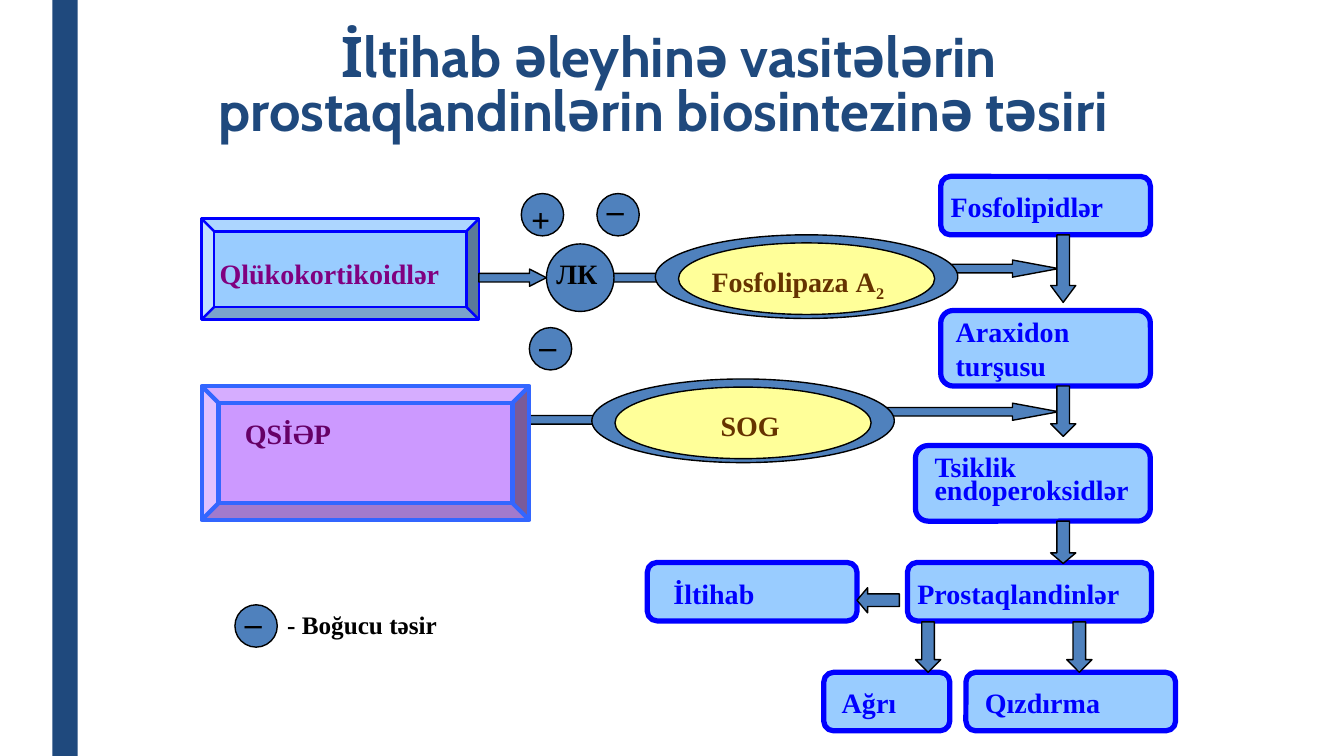
from typing import NamedTuple

from pptx import Presentation
from pptx.dml.color import RGBColor
from pptx.enum.shapes import MSO_SHAPE as Preset
from pptx.enum.text import MSO_ANCHOR as Anchor, MSO_AUTO_SIZE as AutoSize, PP_ALIGN as Align
from pptx.util import Inches, Pt

SERIF = "Times New Roman"
NAVY, STEEL, SKY, YELLOW = "1F497D", "4F81BD", "99CCFF", "FFFF99"
BLUE, BROWN, BLACK = "0000FF", "663300", "000000"
SIGN_SIZE = 0.42


class Figure(NamedTuple):
    preset: Preset
    left: float
    top: float
    width: float
    height: float
    fill: str = STEEL
    line: str | None = BLACK
    weight: float = 1
    adjust: tuple[float, ...] = ()


class Label(NamedTuple):
    text: str
    left: float
    top: float
    width: float
    height: float = 0.44
    color: str = BLUE
    size: float = 20
    spacing: float = 1
    align: Align = Align.LEFT
    subscript: str = ""


class Sign(NamedTuple):
    text: str
    left: float
    top: float
    rise: float


def rgb(value: str) -> RGBColor:
    return RGBColor.from_string(value)


def arrow(preset: Preset, left: float, top: float, width: float, height: float) -> Figure:
    head = max(width, height) / 4 / min(width, height)
    return Figure(preset, left, top, width, height, adjust=(0.5, head))


def stage(left: float, top: float, width: float, height: float = 0.58) -> Figure:
    return Figure(Preset.ROUNDED_RECTANGLE, left, top, width, height, SKY, BLUE, 3.75, (0.167,))


def enzyme(left: float, top: float) -> list[Figure]:
    return [
        Figure(Preset.OVAL, left, top, 3, 0.83),
        Figure(Preset.OVAL, left + 0.23, top + 0.08, 2.54, 0.71, YELLOW),
    ]


def draw_figure(slide, figure: Figure) -> None:
    box = map(Inches, (figure.left, figure.top, figure.width, figure.height))
    shape = slide.shapes.add_shape(figure.preset, *box)
    shape.shadow.inherit = False
    shape.fill.solid()
    shape.fill.fore_color.rgb = rgb(figure.fill)
    if figure.line:
        shape.line.color.rgb = rgb(figure.line)
        shape.line.width = Pt(figure.weight)
    else:
        shape.line.fill.background()
    for index, value in enumerate(figure.adjust):
        shape.adjustments[index] = value


def add_run(paragraph, text: str, font: str, size: float, color: str):
    run = paragraph.add_run()
    run.text = text
    run.font.name = font
    run.font.size = Pt(size)
    run.font.bold = True
    run.font.color.rgb = rgb(color)
    return run


def draw_label(slide, label: Label) -> None:
    box = map(Inches, (label.left, label.top, label.width, label.height))
    frame = slide.shapes.add_textbox(*box).text_frame
    frame.word_wrap = True
    frame.auto_size = AutoSize.SHAPE_TO_FIT_TEXT
    paragraph = frame.paragraphs[0]
    paragraph.alignment = label.align
    paragraph.line_spacing = label.spacing
    add_run(paragraph, label.text, SERIF, label.size, label.color)
    if label.subscript:
        run = add_run(paragraph, label.subscript, SERIF, label.size, label.color)
        run.font._element.set("baseline", "-25000")


def draw_title(slide, text: str) -> None:
    title = slide.shapes.title
    title.left, title.top = Inches(1.62), Inches(0.25)
    title.width, title.height = Inches(10.04), Inches(1.25)
    frame = title.text_frame
    frame.word_wrap = True
    frame.auto_size = AutoSize.NONE
    frame.vertical_anchor = Anchor.MIDDLE
    paragraph = frame.paragraphs[0]
    paragraph.alignment = Align.CENTER
    paragraph.line_spacing = 0.8
    add_run(paragraph, text, "Cabin", 40, NAVY)


SIGNS = [
    Sign("+", 5.17, 1.92, 0),
    Sign("–", 5.92, 1.92, 0.09),
    Sign("–", 5.25, 3.25, 0.08),
    Sign("–", 2.33, 6, 0.08),
]

FIGURES = [
    Figure(Preset.RECTANGLE, 0.52, 0, 0.25, 7.5, NAVY, None),
    arrow(Preset.RIGHT_ARROW, 6.08, 2.67, 1, 0.17),
    arrow(Preset.RIGHT_ARROW, 8.67, 2.58, 1.83, 0.17),
    arrow(Preset.RIGHT_ARROW, 8.67, 4, 1.83, 0.17),
    arrow(Preset.RIGHT_ARROW, 5.25, 4.08, 1, 0.17),
    Figure(Preset.BEVEL, 2, 2.17, 2.75, 1, SKY, BLUE, 1.75, (0.125,)),
    Figure(Preset.BEVEL, 2, 3.83, 3.25, 1.33, "CC99FF", "3366FF", 3, (0.125,)),
    Figure(Preset.OVAL, 5.42, 2.42, 0.67, 0.67),
    *(Figure(Preset.OVAL, sign.left, sign.top, SIGN_SIZE, SIGN_SIZE) for sign in SIGNS),
    *enzyme(6.5, 2.33),
    *enzyme(5.87, 3.76),
    stage(9.33, 1.75, 2.08),
    stage(9.33, 3.08, 2.08, 0.75),
    stage(9.08, 4.42, 2.33, 0.75),
    stage(9, 5.58, 2.42),
    stage(9.58, 6.67, 2.08),
    stage(8.17, 6.67, 1.25),
    stage(6.42, 5.58, 2.08),
    arrow(Preset.DOWN_ARROW, 10.58, 6.17, 0.25, 0.5),
    arrow(Preset.LEFT_ARROW, 8.5, 5.83, 0.42, 0.25),
    arrow(Preset.DOWN_ARROW, 9.08, 6.17, 0.25, 0.5),
    arrow(Preset.DOWN_ARROW, 10.42, 2.33, 0.25, 0.67),
    arrow(Preset.DOWN_ARROW, 10.42, 3.83, 0.25, 0.5),
    arrow(Preset.DOWN_ARROW, 10.42, 5.17, 0.25, 0.42),
    arrow(Preset.RIGHT_ARROW, 4.75, 2.67, 0.67, 0.17),
]

LABELS = [
    Label("Qlükokortikoidlər", 2.08, 2.5, 3.33, color="800080"),
    Label("QSİƏP", 2.33, 4.08, 2.75, color="660066"),
    Label("Fosfolipaza А", 6.96, 2.57, 2.37, color=BROWN, subscript="2"),
    Label("SOG ", 6.25, 4, 2.45, color=BROWN, align=Align.CENTER),
    Label("Fosfolipidlər", 9.33, 1.83, 2.08),
    Label("Araxidon turşusu", 9.38, 3.07, 2.08, 0.77),
    Label("Tsiklik endoperoksidlər", 9.17, 4.5, 2.25, 0.58, spacing=0.7),
    Label("Prostaqlandinlər", 9, 5.67, 2.42),
    Label("İltihab", 6.58, 5.67, 1.92),
    Label("Ağrı", 8.25, 6.75, 1.08),
    Label("Qızdırma", 9.67, 6.75, 2),
    Label("ЛК", 5.42, 2.5, 0.67, color=BLACK),
    *(Label(sign.text, sign.left, sign.top - sign.rise, SIGN_SIZE, 0.5, BLACK, 24) for sign in SIGNS),
    Label("- Boğucu təsir", 2.75, 6, 2.83, 0.4, BLACK, 18),
]


def main() -> None:
    deck = Presentation()
    deck.slide_width, deck.slide_height = Inches(13.33), Inches(7.5)
    slide = deck.slides.add_slide(deck.slide_layouts[5])
    draw_title(slide, "İltihab əleyhinə vasitələrin prostaqlandinlərin biosintezinə təsiri ")
    for figure in FIGURES:
        draw_figure(slide, figure)
    for label in LABELS:
        draw_label(slide, label)
    deck.save("out.pptx")


if __name__ == "__main__":
    main()
